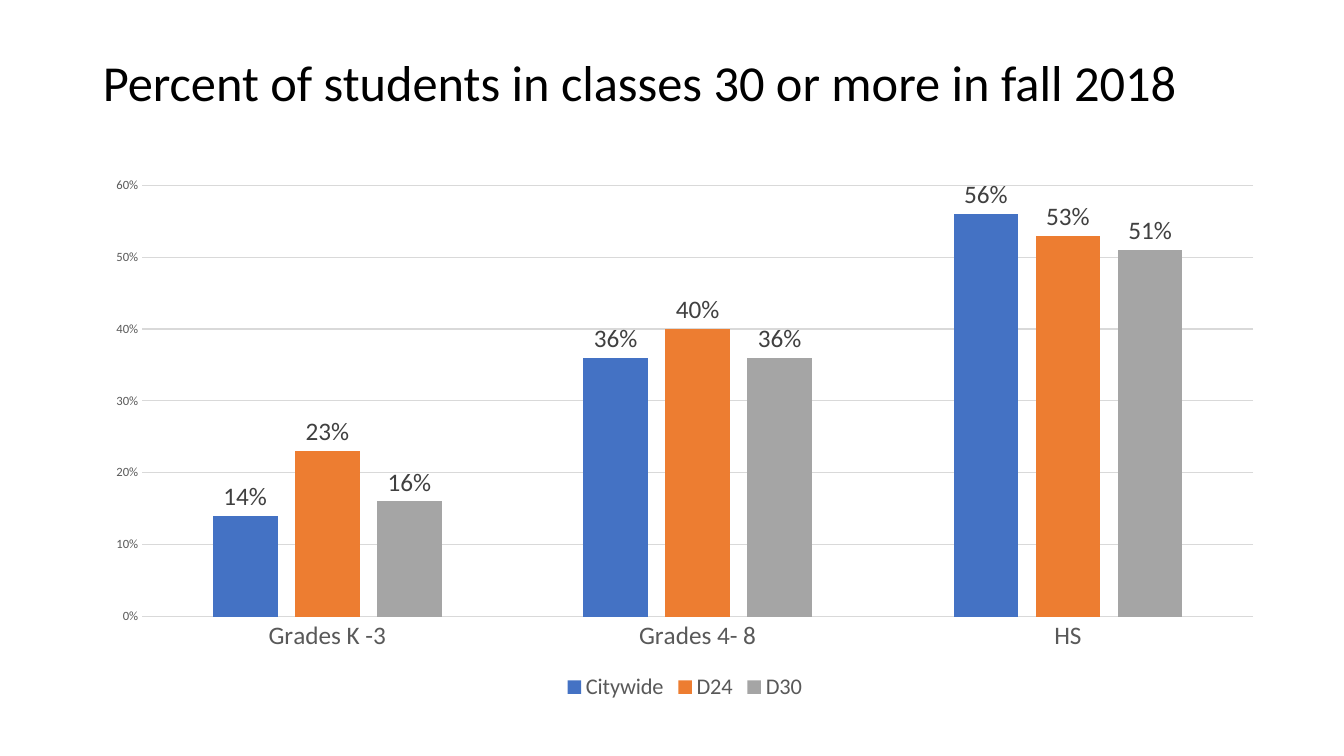
import pptx
import pptx.chart.data
import pptx.dml.color
import pptx.enum.chart
import pptx.enum.text
import pptx.util

FONT = "Calibri"
WIDTH, HEIGHT = pptx.util.Inches(13.33), pptx.util.Inches(7.5)
GREY_TEXT, GREY_LINE = "595959", "D9D9D9"
GRADES = ["Grades K -3", "Grades 4- 8", "HS"]
DISTRICTS = [
    ("Citywide", "4472C4", (0.14, 0.36, 0.56)),
    ("D24", "ED7D31", (0.23, 0.40, 0.53)),
    ("D30", "A5A5A5", (0.16, 0.36, 0.51)),
]


def rgb(hex_color):
    return pptx.dml.color.RGBColor.from_string(hex_color)


def format_font(font, size, color):
    font.name = FONT
    font.size = pptx.util.Pt(size)
    font.bold = False
    font.color.rgb = rgb(color)


def format_line(line, color, width=0.75):
    line.color.rgb = rgb(color)
    line.width = pptx.util.Pt(width)


def share(left, top, width, height):
    """Turn shares of the slide into a position and size."""
    return (int(left * WIDTH), int(top * HEIGHT),
            int(width * WIDTH), int(height * HEIGHT))


def write_text(tf, text, size=18, color="000000", align=None, spacing=1.0):
    p = tf.paragraphs[0]
    p.alignment = align
    p.line_spacing = spacing
    r = p.add_run()
    r.text = text
    format_font(r.font, size, color)


def add_title(s, text, box):
    title = s.shapes.title
    title.left, title.top, title.width, title.height = box
    tf = title.text_frame
    tf.word_wrap = True
    tf.auto_size = pptx.enum.text.MSO_AUTO_SIZE.NONE
    tf.vertical_anchor = pptx.enum.text.MSO_ANCHOR.MIDDLE
    # A deep bottom margin lifts the line above the middle of its box
    tf.margin_bottom = pptx.util.Inches(0.57)
    write_text(tf, text, size=36, align=pptx.enum.text.PP_ALIGN.LEFT, spacing=0.9)


def format_axes(chart):
    no_tick = pptx.enum.chart.XL_TICK_MARK.NONE
    for axis, size in ((chart.category_axis, 18), (chart.value_axis, 9)):
        axis.major_tick_mark = axis.minor_tick_mark = no_tick
        format_font(axis.tick_labels.font, size, GREY_TEXT)
    format_line(chart.category_axis.format.line, GREY_LINE)

    values = chart.value_axis
    values.minimum_scale, values.maximum_scale, values.major_unit = 0, 0.6, 0.1
    values.tick_labels.number_format = "0%"
    values.tick_labels.number_format_is_linked = False
    values.format.line.fill.background()
    values.has_major_gridlines = True
    format_line(values.major_gridlines.format.line, GREY_LINE)


def format_series(series, color):
    series.format.fill.solid()
    series.format.fill.fore_color.rgb = rgb(color)
    series.invert_if_negative = False
    labels = series.data_labels
    labels.show_value = True
    labels.number_format = "0%"
    labels.number_format_is_linked = False
    labels.position = pptx.enum.chart.XL_LABEL_POSITION.OUTSIDE_END
    format_font(labels.font, 18, "404040")


def add_column_chart(s, box):
    data = pptx.chart.data.CategoryChartData(number_format="0%")
    data.categories = GRADES
    for name, _, values in DISTRICTS:
        data.add_series(name, values)
    kind = pptx.enum.chart.XL_CHART_TYPE.COLUMN_CLUSTERED
    chart = s.shapes.add_chart(kind, *box, data).chart
    chart.has_title = False
    format_font(chart.font, 10, "000000")

    # Columns
    plot = chart.plots[0]
    plot.gap_width, plot.overlap = 219, -27
    plot.vary_by_categories = False
    for series, (_, color, _) in zip(plot.series, DISTRICTS):
        format_series(series, color)

    format_axes(chart)

    # Legend
    chart.has_legend = True
    chart.legend.position = pptx.enum.chart.XL_LEGEND_POSITION.BOTTOM
    chart.legend.include_in_layout = False
    format_font(chart.legend.font, 16, GREY_TEXT)


def main():
    prs = pptx.Presentation()
    prs.slide_width, prs.slide_height = WIDTH, HEIGHT
    s = prs.slides.add_slide(prs.slide_layouts.get_by_name("Title Only"))
    add_title(s, "Percent of students in classes 30 or more in fall 2018",
              share(0.069, 0.067, 0.863, 0.16))
    add_column_chart(s, share(0.069, 0.221, 0.881, 0.712))
    prs.save("out.pptx")


if __name__ == "__main__":
    main()
